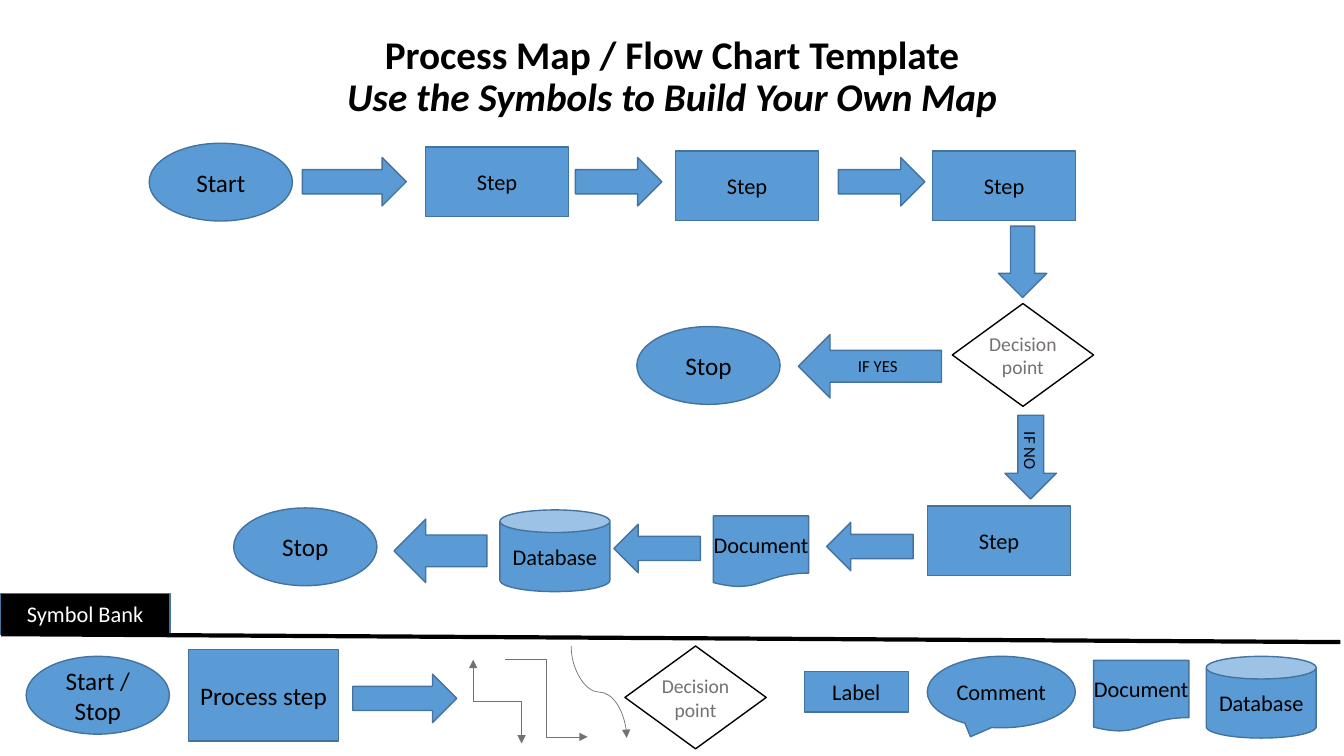
import collections

import lxml.etree
import pptx
import pptx.dml.color
import pptx.enum.shapes
import pptx.enum.text
import pptx.oxml.ns
import pptx.util

Cm = pptx.util.Cm
Pt = pptx.util.Pt
SHAPE = pptx.enum.shapes.MSO_SHAPE
CONNECTOR = pptx.enum.shapes.MSO_CONNECTOR
ALIGN = pptx.enum.text.PP_ALIGN
ANCHOR = pptx.enum.text.MSO_ANCHOR

Box = collections.namedtuple("Box", "left top width height")
Symbol = collections.namedtuple("Symbol", "preset width height size padded")

FONT = "Calibri"
BLUE, EDGE, GREY, BLACK, WHITE = "5B9BD5", "43739E", "767171", "000000", "FFFFFF"

# Every symbol has one standard size in cm and one text size in points
SYMBOLS = {
    "terminal": Symbol(SHAPE.OVAL, 3.61, 1.96, 18, False),
    "step": Symbol(SHAPE.RECTANGLE, 3.61, 1.75, 16, True),
    "process": Symbol(SHAPE.FLOWCHART_PROCESS, 3.78, 2.31, 18, False),
    "decision": Symbol(SHAPE.DIAMOND, 3.56, 2.59, 14, False),
    "document": Symbol(SHAPE.FLOWCHART_DOCUMENT, 2.4, 1.8, 16, False),
    "database": Symbol(SHAPE.CAN, 2.77, 2.06, 16, False),
    "comment": Symbol(SHAPE.OVAL_CALLOUT, 3.73, 1.8, 16, False),
    "label": Symbol(SHAPE.RECTANGLE, 2.62, 1.02, 16, True),
    "heading": Symbol(SHAPE.RECTANGLE, 4.29, 1.02, 16, True),
    "arrow": Symbol(SHAPE.RIGHT_ARROW, 2.18, 1.22, 12, True),
}


def colour(value):
    return pptx.dml.color.RGBColor.from_string(value)


def add_symbol(page, area, kind, left, top, text="", size=None):
    symbol = SYMBOLS[kind]
    width, height = size or (symbol.width, symbol.height)
    shape = page.shapes.add_shape(symbol.preset, Cm(area.left + left), Cm(area.top + top),
                                  Cm(width), Cm(height))
    fill, edge, ink = {"decision": (WHITE, BLACK, GREY),
                       "heading": (BLACK, EDGE, WHITE)}.get(kind, (BLUE, EDGE, BLACK))
    shape.shadow.inherit = False
    shape.fill.solid()
    shape.fill.fore_color.rgb = colour(fill)
    shape.line.color.rgb = colour(edge)
    shape.line.width = Pt(1)
    if kind == "database":
        shape.adjustments[0] = 0.277

    if text:
        frame = shape.text_frame
        frame.word_wrap = True
        frame.vertical_anchor = ANCHOR.MIDDLE
        if not symbol.padded:
            frame.margin_left = frame.margin_right = 0
            frame.margin_top = frame.margin_bottom = 0
        para = frame.paragraphs[0]
        para.text = text
        para.alignment = ALIGN.CENTER
        para.font.name = FONT
        para.font.size = Pt(symbol.size)
        para.font.color.rgb = colour(ink)
    return shape


def add_line(page, area, kind, left, top, width, height, ink, weight, ends=(), turned=False):
    x, y = area.left + left, area.top + top
    line = page.shapes.add_connector(kind, Cm(x), Cm(y), Cm(x + width), Cm(y + height))
    line.line.color.rgb = colour(ink)
    line.line.width = Pt(weight)
    qn = pptx.oxml.ns.qn
    properties = line._element.spPr
    for end in ends:
        lxml.etree.SubElement(properties.find(qn("a:ln")), qn("a:" + end), type="triangle")
    lxml.etree.SubElement(properties, qn("a:effectLst"))
    if turned:
        transform = properties.find(qn("a:xfrm"))
        transform.set("rot", "16200000")
        transform.set("flipH", "1")


def draw_title(page, area):
    title = page.shapes.add_textbox(Cm(area.left), Cm(area.top), Cm(area.width), Cm(area.height))
    frame = title.text_frame
    frame.word_wrap = True
    frame.vertical_anchor = ANCHOR.MIDDLE
    para = frame.paragraphs[0]
    para.alignment = ALIGN.CENTER
    para.line_spacing = 0.9
    para.font.name = FONT
    para.font.size = Pt(28)
    para.font.bold = True
    para.font.color.rgb = colour(BLACK)
    para.add_run().text = "Process Map / Flow Chart Template"
    para.add_line_break()
    span = para.add_run()
    span.text = "Use the Symbols to Build Your Own Map"
    span.font.italic = True


def draw_flow(page, area):
    # Steps, decision and end points
    for kind, left, top, text in [
        ("terminal", 0, 0, "Start"),
        ("step", 6.96, 0.1, "Step"),
        ("step", 13.26, 0.2, "Step"),
        ("step", 19.74, 0.2, "Step"),
        ("decision", 20.24, 4.04, "Decision point"),
        ("terminal", 12.29, 4.62, "Stop"),
        ("step", 19.61, 9.14, "Step"),
        ("document", 14.22, 9.39, "Document"),
        ("database", 8.84, 9.24, "Database"),
        ("terminal", 2.13, 9.19, "Stop"),
    ]:
        add_symbol(page, area, kind, left, top, text)

    # Block arrows, turned to the direction of the flow
    for left, top, size, angle, text in [
        (3.86, 0.36, (2.62, 1.22), 0, ""),
        (10.74, 0.36, None, 0, ""),
        (17.37, 0.36, None, 0, ""),
        (21.11, 2.38, (1.8, 1.22), 90, ""),
        (21.16, 7.26, (2.11, 1.3), 90, "IF NO"),
        (17.07, 9.55, None, 180, ""),
        (11.71, 9.6, None, 180, ""),
        (6.17, 9.47, (2.34, 1.6), 180, ""),
    ]:
        add_symbol(page, area, "arrow", left, top, text, size).rotation = angle

    # Mirrored instead of turned, so that its text stays upright
    yes_arrow = add_symbol(page, area, "arrow", 16.36, 4.82, "IF YES", (3.61, 1.6))
    yes_arrow._element.spPr.find(pptx.oxml.ns.qn("a:xfrm")).set("flipH", "1")


def draw_symbol_bank(page, area):
    # Heading and dividing line
    add_symbol(page, area, "heading", 0, 0, "Symbol Bank")
    add_line(page, area, CONNECTOR.STRAIGHT, 0.03, 1.02, 33.75, 0.2, BLACK, 3)

    # Thin connectors
    for kind, left, top, width, height, ends, turned in [
        (CONNECTOR.ELBOW, 11.48, 2.11, 2.11, 1.22, ("headEnd", "tailEnd"), True),
        (CONNECTOR.ELBOW, 12.73, 1.65, 2.08, 1.96, ("tailEnd",), False),
        (CONNECTOR.CURVE, 13.94, 1.78, 2.31, 1.4, ("tailEnd",), True),
    ]:
        add_line(page, area, kind, left, top, width, height, GREY, 0.5, ends, turned)

    # Symbols
    add_symbol(page, area, "arrow", 8.89, 2.03, size=(2.62, 1.22))
    for kind, left, top, text in [
        ("terminal", 0.66, 1.58, "Start / Stop"),
        ("process", 4.75, 1.4, "Process step"),
        ("decision", 15.75, 1.32, "Decision point"),
        ("label", 20.27, 1.96, "Label"),
        ("comment", 23.37, 1.58, "Comment"),
        ("document", 27.56, 1.68, "Document"),
        ("database", 30.4, 1.58, "Database"),
    ]:
        add_symbol(page, area, kind, left, top, text)


def main():
    deck = pptx.Presentation()
    deck.slide_width = Cm(33.87)
    deck.slide_height = Cm(19.05)
    page = deck.slides.add_slide(deck.slide_layouts[6])
    draw_title(page, Box(2.33, 1.02, 29.21, 1.88))
    draw_flow(page, Box(3.76, 3.61, 23.8, 11.35))
    draw_symbol_bank(page, Box(0, 14.96, 33.87, 4.09))
    deck.save("out.pptx")


if __name__ == "__main__":
    main()
